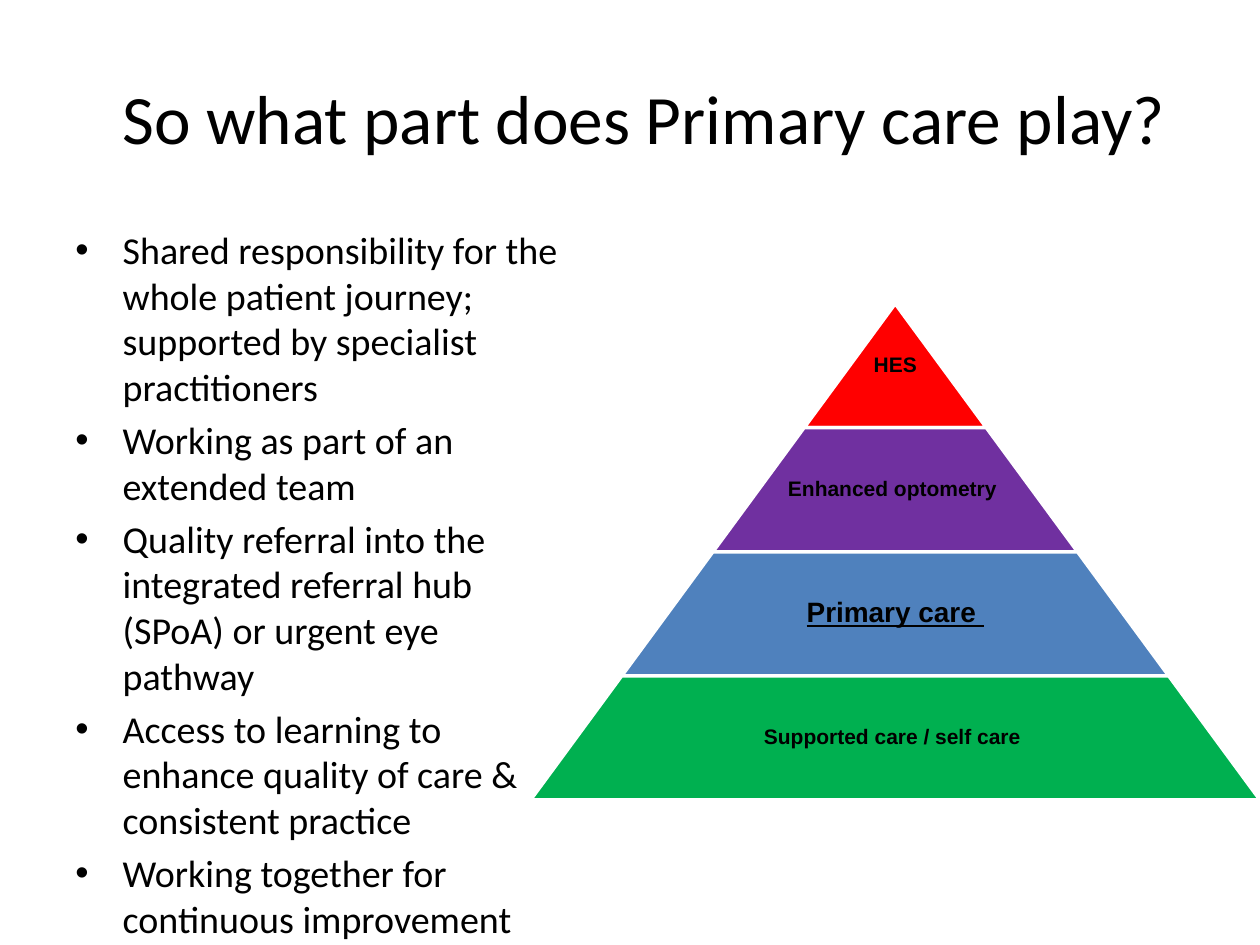
import pptx
import pptx.dml.color
import pptx.enum.shapes
import pptx.enum.text
import pptx.util
import lxml.etree

Pt = pptx.util.Pt
RGBColor = pptx.dml.color.RGBColor
ALIGN = pptx.enum.text.PP_ALIGN
ANCHOR = pptx.enum.text.MSO_ANCHOR
SHAPE = pptx.enum.shapes.MSO_SHAPE

BLACK = RGBColor(0x00, 0x00, 0x00)
WHITE = RGBColor(0xFF, 0xFF, 0xFF)
RED = RGBColor(0xFF, 0x00, 0x00)
PURPLE = RGBColor(0x70, 0x30, 0xA0)
BLUE = RGBColor(0x4F, 0x81, 0xBD)
GREEN = RGBColor(0x00, 0xB0, 0x50)

BULLETS = [
    "Shared responsibility for the whole patient journey; supported by specialist practitioners",
    "Working as part of an extended team",
    "Quality referral into the integrated referral hub (SPoA) or urgent eye pathway",
    "Access to learning to enhance quality of care & consistent practice",
    "Working together for continuous improvement",
]
LEVELS = [
    ("HES", RED, {}),
    ("Enhanced optometry ", PURPLE, {}),
    ("Primary care ", BLUE, {"size": 16, "underline": True}),
    ("Supported care / self care ", GREEN, {}),
]

APEX_X, APEX_Y = 511.6, 173.5
LEVEL_H, STEP_W = 70.9, 104.2
BULLET_INDENT = 27


def write(p, text, font="Calibri", size=12, bold=False, underline=False,
          align=ALIGN.LEFT, before=0, spacing=1.0):
    p.alignment = align
    p.space_before = Pt(before)
    p.line_spacing = spacing
    r = p.add_run()
    r.text = text
    r.font.name = font
    r.font.size = Pt(size)
    r.font.bold = bold
    r.font.underline = underline
    r.font.color.rgb = BLACK


def add_bullet(p):
    pPr = p._p.get_or_add_pPr()
    pPr.set("marL", str(Pt(BULLET_INDENT)))
    pPr.set("indent", str(-Pt(BULLET_INDENT)))
    ns = pptx.oxml.ns.qn
    lxml.etree.SubElement(pPr, ns("a:buFont")).set("typeface", "Arial")
    lxml.etree.SubElement(pPr, ns("a:buChar")).set("char", "•")


class SlideBuilder:
    def __init__(self, slide):
        self.s = slide

    def text_frame(self, x, y, w, h, anchor=ANCHOR.MIDDLE, inset=None):
        tf = self.s.shapes.add_textbox(Pt(x), Pt(y), Pt(w), Pt(h)).text_frame
        tf.word_wrap = True
        tf.vertical_anchor = anchor
        if inset is not None:
            tf.margin_left = tf.margin_right = Pt(inset)
            tf.margin_top = tf.margin_bottom = Pt(inset)
        return tf

    def title(self, text, x, y, w, h):
        tf = self.text_frame(x, y, w, h)
        write(tf.paragraphs[0], text, size=39.6, align=ALIGN.CENTER)

    def bullets(self, items, x, y, w, h):
        tf = self.text_frame(x, y, w, h, ANCHOR.TOP)
        for i, item in enumerate(items):
            p = tf.add_paragraph() if i else tf.paragraphs[0]
            write(p, item, size=21.7, before=4.3)
            add_bullet(p)

    def level(self, index, text, color, style):
        w = STEP_W * (index + 1)
        y = APEX_Y + LEVEL_H * index
        sp = self.s.shapes.add_shape(
            SHAPE.TRAPEZOID, Pt(APEX_X - w / 2), Pt(y), Pt(w), Pt(LEVEL_H))
        sp.adjustments[0] = STEP_W / 2 / LEVEL_H
        sp.shadow.inherit = False
        sp.fill.solid()
        sp.fill.fore_color.rgb = color
        sp.line.color.rgb = WHITE
        sp.line.width = Pt(2)
        text_w = max(STEP_W, 0.65 * w)
        tf = self.text_frame(APEX_X - text_w / 2, y, text_w, LEVEL_H, inset=1.2)
        write(tf.paragraphs[0], text, font="Arial", bold=True,
              align=ALIGN.CENTER, spacing=0.9, **style)


def main():
    prs = pptx.Presentation()
    prs.slide_width, prs.slide_height = Pt(720), Pt(540)
    builder = SlideBuilder(prs.slides.add_slide(prs.slide_layouts[6]))
    builder.title("So what part does Primary care play?", 36, 21.6, 664, 90)
    builder.bullets(BULLETS, 36, 126, 302, 365)
    for i, (text, color, style) in enumerate(LEVELS):
        builder.level(i, text, color, style)
    prs.save("out.pptx")


if __name__ == "__main__":
    main()
